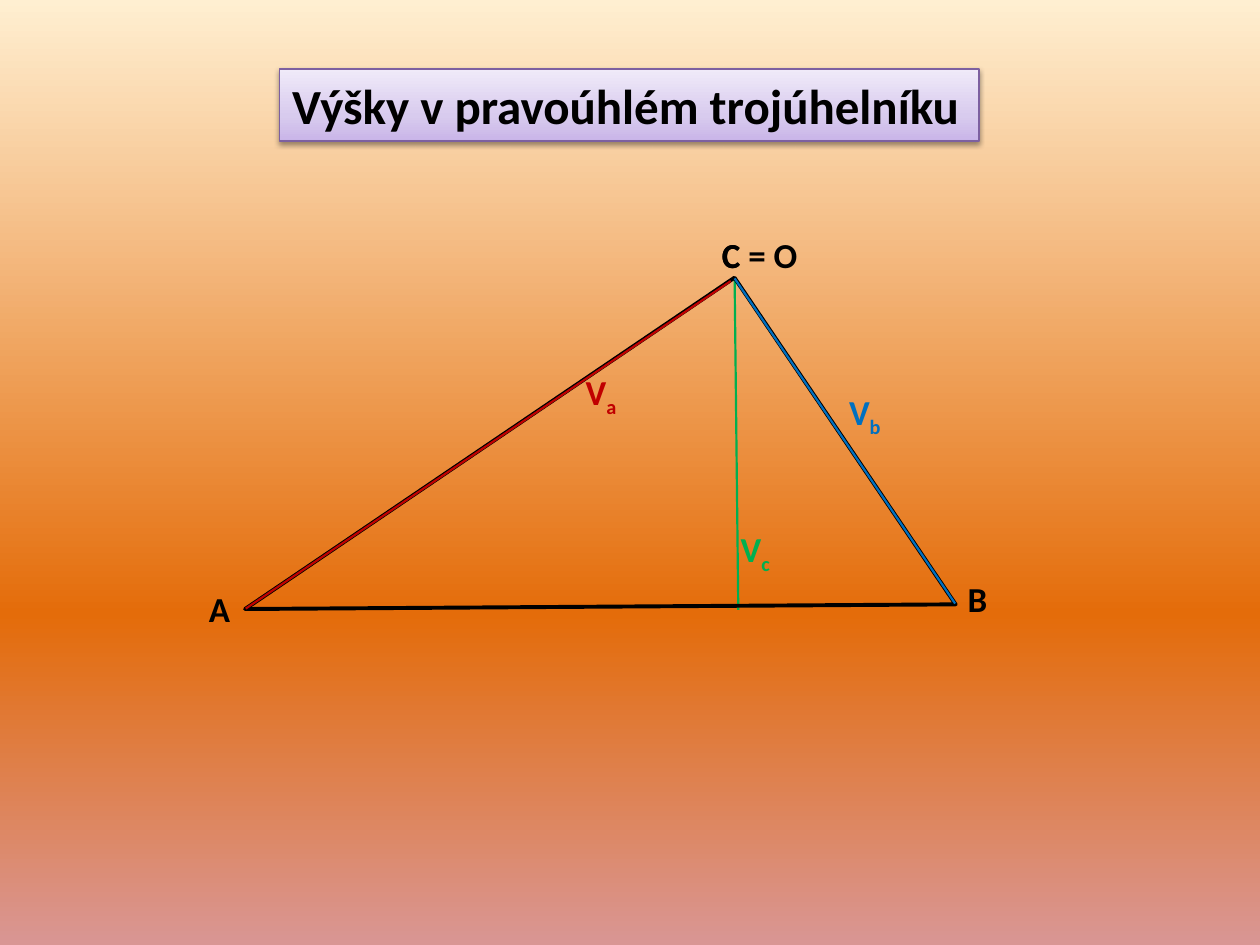
from lxml.etree import SubElement
from pptx import Presentation
from pptx.dml.color import RGBColor
from pptx.enum.shapes import MSO_CONNECTOR as Link, MSO_SHAPE as Preset
from pptx.enum.text import MSO_ANCHOR as Anchor, MSO_AUTO_SIZE as AutoSize, PP_ALIGN as Align
from pptx.oxml.ns import qn
from pptx.util import Pt

BLACK = RGBColor(0x00, 0x00, 0x00)
RED = RGBColor(0xC0, 0x00, 0x00)
BLUE = RGBColor(0x00, 0x70, 0xC0)
GREEN = RGBColor(0x00, 0xB0, 0x50)
PURPLE = RGBColor(0x7D, 0x60, 0xA0)
CREAM = RGBColor(0xFF, 0xEF, 0xD1)
ORANGE = RGBColor(0xE4, 0x6C, 0x0A)
PINK = RGBColor(0xD9, 0x96, 0x94)
LILAC = RGBColor(0xC9, 0xB5, 0xE8)
LIGHT_LILAC = RGBColor(0xD8, 0xCB, 0xEE)
PALE_LILAC = RGBColor(0xF0, 0xEA, 0xF9)

TITLE = "Výšky v pravoúhlém trojúhelníku"
TITLE_BOX = (159.8, 39.4, 399.6, 41.2)
TRIANGLE_BOX = (174.2, 234, 337.7, 225.4)
TRIANGLE_TURN = 145.9
SKY = [(0, CREAM), (65, ORANGE), (100, PINK)]
TITLE_FADE = [(0, LILAC), (35, LIGHT_LILAC), (100, PALE_LILAC)]
LABEL_HEIGHT = 31.5

VERTEX_C = (419.8, 159.1)
ALTITUDES = [
    (VERTEX_C, (421.9, 348.5), GREEN),
    ((140.4, 347.8), (417.6, 160.6), RED),
    ((545.8, 344.9), VERTEX_C, BLUE),
]
LABELS = [
    ("A", "", 112.3, 331.9, 26.6, BLACK),
    ("B", "", 545.8, 326.2, 25.9, BLACK),
    ("C", "", 405.4, 129.6, 25.2, BLACK),
    ("V", "a", 327.6, 208.1, 32.4, RED),
    ("V", "b", 478.1, 219.6, 33.8, BLUE),
    ("V", "c", 416.2, 298.1, 31, GREEN),
    ("C = O", "", 405.4, 129.6, 58.3, BLACK),
]


def points(values):
    return [Pt(value) for value in values]


def paint_gradient(fill, owner, stops, clockwise_angle):
    fill.gradient()
    fill.gradient_angle = 360 - clockwise_angle
    stop_list = next(owner.iter(qn("a:gsLst")))
    for old_stop in list(stop_list):
        stop_list.remove(old_stop)
    for position, color in stops:
        stop = SubElement(stop_list, qn("a:gs"), pos=str(position * 1000))
        SubElement(stop, qn("a:srgbClr"), val=str(color))


def write(shape, text, subscript="", size=20, color=BLACK):
    frame = shape.text_frame
    frame.word_wrap = False
    frame.auto_size = AutoSize.SHAPE_TO_FIT_TEXT
    frame.vertical_anchor = Anchor.TOP
    paragraph = frame.paragraphs[0]
    paragraph.alignment = Align.LEFT
    for part, baseline in ((text, 0), (subscript, -25000)):
        if not part:
            continue
        run = paragraph.add_run()
        run.text = part
        font = run.font
        font.name, font.size, font.bold = "Calibri", Pt(size), True
        font.color.rgb = color
        if baseline:
            run.font._element.set("baseline", str(baseline))


def add_altitude(slide, start, end, color):
    altitude = slide.shapes.add_connector(Link.STRAIGHT, *points(start + end))
    altitude.line.color.rgb = color
    altitude.line.width = Pt(1.25)
    SubElement(altitude.element.spPr, qn("a:effectLst"))


def add_triangle(slide):
    triangle = slide.shapes.add_shape(Preset.RIGHT_TRIANGLE, *points(TRIANGLE_BOX))
    triangle.rotation = TRIANGLE_TURN
    triangle.shadow.inherit = False
    triangle.fill.background()
    triangle.line.color.rgb = BLACK
    triangle.line.width = Pt(2.25)


def add_title(slide):
    title = slide.shapes.add_shape(Preset.RECTANGLE, *points(TITLE_BOX))
    paint_gradient(title.fill, title.element, TITLE_FADE, 270)
    title.line.color.rgb = PURPLE
    title.line.width = Pt(0.75)
    title.shadow.inherit = False
    effects = title.element.spPr.find(qn("a:effectLst"))
    shadow = SubElement(effects, qn("a:outerShdw"), blurRad=str(Pt(3.1)),
                        dist=str(Pt(1.6)), dir="5400000", rotWithShape="0")
    shade = SubElement(shadow, qn("a:srgbClr"), val=str(BLACK))
    SubElement(shade, qn("a:alpha"), val="38000")
    write(title, TITLE, size=28)


def main():
    deck = Presentation()
    deck.slide_width, deck.slide_height = Pt(720), Pt(540)
    slide = deck.slides.add_slide(deck.slide_layouts[6])
    paint_gradient(slide.background.fill, slide.element, SKY, 90)

    height_c, *side_heights = ALTITUDES
    add_altitude(slide, *height_c)
    add_triangle(slide)
    add_title(slide)
    for altitude in side_heights:
        add_altitude(slide, *altitude)
    for text, subscript, left, top, width, color in LABELS:
        label = slide.shapes.add_textbox(*points((left, top, width, LABEL_HEIGHT)))
        write(label, text, subscript, color=color)

    deck.save("out.pptx")


if __name__ == "__main__":
    main()
